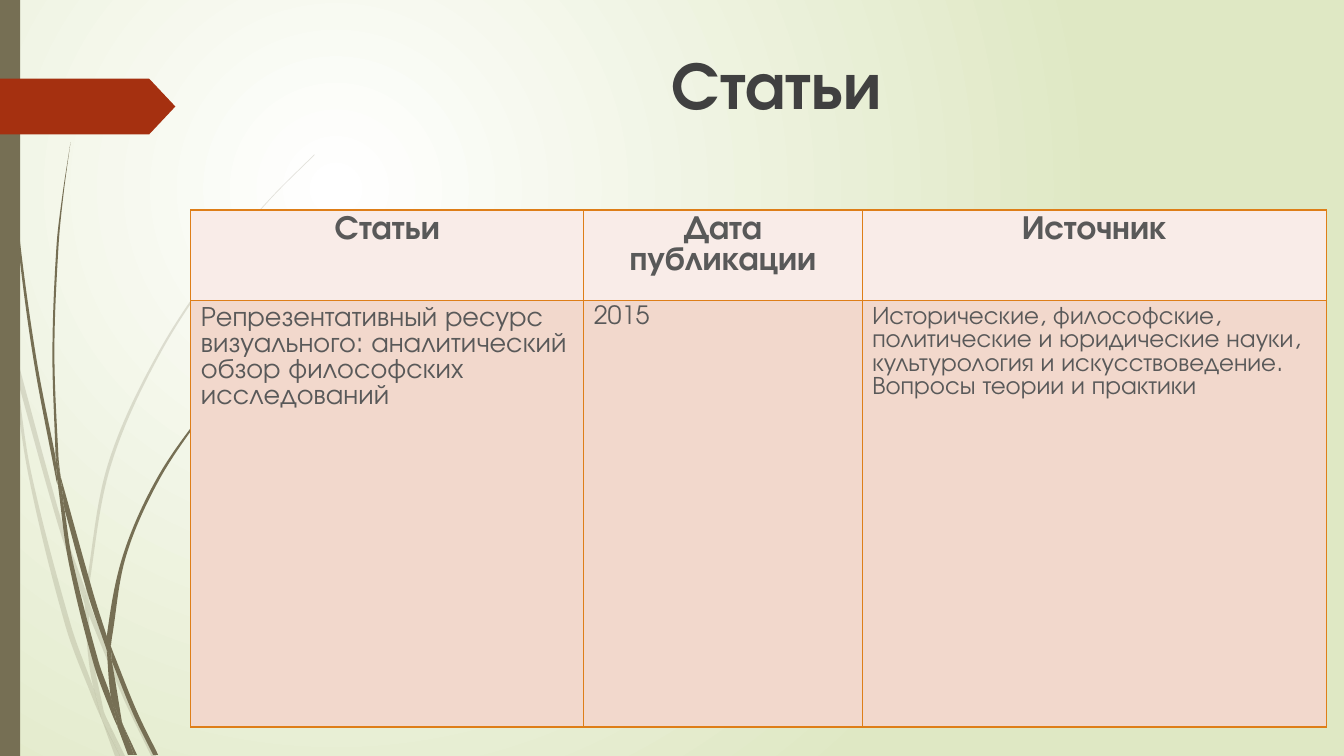
from math import dist

from lxml import etree
from pptx import Presentation
from pptx.dml.color import RGBColor
from pptx.enum.shapes import MSO_SHAPE as Preset
from pptx.enum.text import MSO_ANCHOR as Anchor, PP_ALIGN as Align
from pptx.oxml import parse_xml
from pptx.oxml.ns import nsdecls, qn
from pptx.util import Cm, Pt

FONT = "TeX Gyre Adventor"
COLOURS = {
    "centre": "FFFFFF", "edge": "DFE8C4", "grass": "766F54", "arrow": "A53010",
    "title": "404040", "text": "595959", "border": "DE7E18",
    "header": "F9ECE8", "body": "F2D8CC",
}
TITLE = "Статьи"
HEADERS = ["Статьи", "Дата публикации", "Источник"]
ARTICLE = [
    ("Репрезентативный ресурс визуального: аналитический обзор "
     "философских исследований", 20),
    ("2015", 18),
    ("Исторические, философские, политические и юридические науки, "
     "культурология и искусствоведение. Вопросы теории и практики", 18),
]
COLUMN_WIDTHS = [9.9, 7.02, 11.7]
ROW_HEIGHTS = [1.73, 10.74]

# Each piece of grass is two facing edges; points are in units of UNIT cm
UNIT = 2.54
PALE_GRASS = [
    ([(0.11, 3.5), (0.09, 3.22), (0, 2.82)], [(0, 2.99), (0.1, 3.44)]),
    ([(0.17, 3.76), (0.58, 5.22), (0.84, 5.99)],
     [(0.85, 5.86), (0.62, 5.2), (0.14, 3.45)]),
    ([(0.88, 6.1), (1.23, 6.94), (1.5, 7.5)],
     [(1.55, 7.5), (1.27, 6.92), (0.92, 6.07), (0.88, 5.96)]),
    ([(1.05, 7.11), (1.19, 7.5)], [(1.24, 7.5)]),
    ([(0.11, 3.5), (0.28, 4.7), (0.65, 6.21), (0.92, 6.93), (1.01, 7.14)],
     [(0.93, 6.83), (0.7, 6.19), (0.31, 4.69), (0.17, 3.76)]),
    ([(0.84, 5.99), (0.87, 6.46), (0.93, 6.83), (1.05, 7.11)],
     [(1.03, 7.06), (0.91, 6.46), (0.88, 6.1)]),
    ([(0.88, 5.96), (0.88, 5.84), (1.1, 4.62), (1.6, 3.49), (2.29, 2.45),
      (2.68, 1.98), (3.12, 1.54)],
     [(3.12, 1.53), (2.68, 1.97), (2.28, 2.44), (1.58, 3.48), (1.07, 4.61),
      (0.85, 5.84)]),
    ([(1.01, 7.14), (1.14, 7.5)], [(1.19, 7.5)]),
    ([(0.88, 6.1), (0.88, 5.96)], [(0.85, 5.86), (0.84, 5.99)]),
    ([(0.93, 6.83), (0.99, 7.07), (1.01, 7.14), (1.19, 7.5)],
     [(1.05, 7.11), (0.96, 6.92)]),
]
DARK_GRASS = [
    ([(0.03, 0), (0.04, 0.48), (0.07, 1.1), (0.17, 2.33), (0.33, 3.55),
      (0.56, 4.77), (0.57, 4.81)],
     [(0.55, 4.53), (0.36, 3.55), (0.19, 2.32), (0.08, 1.09), (0.05, 0.48),
      (0.04, 0)]),
    ([(0.64, 5.05), (0.88, 5.92), (1.06, 6.45)],
     [(1.06, 6.31), (0.93, 5.9), (0.6, 4.72)]),
    ([(1.11, 6.56), (1.32, 7.08), (1.52, 7.49)],
     [(1.57, 7.49), (1.36, 7.06), (1.13, 6.49), (1.1, 6.41)]),
    ([(0.57, 4.77), (0.68, 5.57), (0.93, 6.59), (1.11, 7.08), (1.17, 7.22)],
     [(1.16, 7.17), (1.1, 6.91), (0.98, 6.57), (0.72, 5.56), (0.64, 5.05)]),
    ([(0.6, 4.72), (0.58, 4.53), (0.54, 3.49), (0.58, 2.45), (0.63, 1.93),
      (0.7, 1.41)],
     [(0.7, 1.41), (0.62, 1.93), (0.56, 2.45), (0.52, 3.49), (0.55, 4.49)]),
    ([(1.22, 7.19), (1.33, 7.49)], [(1.36, 7.49)]),
    ([(0.55, 4.49), (0.57, 4.77), (0.64, 5.05)], [(0.6, 4.72)]),
    ([(1.11, 6.33), (1.25, 5.52), (1.58, 4.76), (2.05, 4.06), (2.31, 3.74),
      (2.45, 3.59), (2.61, 3.44)],
     [(2.6, 3.44), (2.45, 3.58), (2.31, 3.73), (2.04, 4.05), (1.56, 4.74),
      (1.22, 5.51), (1.06, 6.31), (1.1, 6.41)]),
    ([(1.17, 7.22), (1.27, 7.49)], [(1.31, 7.49)]),
    ([(1.06, 6.45), (1.1, 6.91), (1.16, 7.06), (1.22, 7.19)],
     [(1.21, 7.16), (1.11, 6.56), (1.09, 6.51)]),
    ([(1.06, 6.31), (1.06, 6.45)], [(1.11, 6.56), (1.1, 6.41)]),
    ([(1.1, 6.91), (1.16, 7.17), (1.17, 7.22), (1.3, 7.49)],
     [(1.33, 7.49), (1.22, 7.19), (1.16, 7.06)]),
]


def colour(name):
    return RGBColor.from_string(COLOURS[name])


def paint(shape, name, opacity=100):
    shape.shadow.inherit = False
    shape.line.fill.background()
    shape.fill.solid()
    shape.fill.fore_color.rgb = colour(name)
    if opacity < 100:
        tone = shape.fill._xPr.find(f".//{qn('a:srgbClr')}")
        etree.SubElement(tone, qn("a:alpha"), val=str(opacity * 1000))


def curve_controls(edge):
    """Return both control points of every smooth segment along an edge."""
    padded = [edge[0], *edge, edge[-1]]
    controls = []
    for before, start, end, after in zip(padded, padded[1:], padded[2:], padded[3:]):
        reach = dist(start, end) / 3
        leave, arrive = reach / dist(before, end), reach / dist(start, after)
        controls.append((
            [s + (e - b) * leave for s, e, b in zip(start, end, before)],
            [e - (a - s) * arrive for s, e, a in zip(start, end, after)]))
    return controls


def add_grass(slide, edges, opacity):
    first, second = [[(Cm(x * UNIT), Cm(y * UNIT)) for x, y in edge] for edge in edges]
    outline = first + second
    builder = slide.shapes.build_freeform(*outline[0])
    builder.add_line_segments(outline[1:], close=True)
    shape = builder.convert_to_shape()
    lines = list(shape._element.iter(qn("a:lnTo")))
    # None stands for the straight step from one edge to the other
    controls = curve_controls(first) + [None] + curve_controls(second)
    for line, pair in zip(lines, controls):
        if pair:
            line.tag = qn("a:cubicBezTo")
            for position, (x, y) in enumerate(pair):
                line.insert(position, line.makeelement(
                    qn("a:pt"), x=str(round(x - shape.left)), y=str(round(y - shape.top))))
    paint(shape, "grass", opacity)


def set_background(slide):
    slide.background.fill.solid()
    properties = slide._element.cSld.bg.bgPr
    stops = "".join(
        f'<a:gs pos="{position}"><a:srgbClr val="{COLOURS[name]}"/></a:gs>'
        for position, name in [(0, "centre"), (100000, "edge")])
    gradient = parse_xml(
        f'<a:gradFill {nsdecls("a")} rotWithShape="1"><a:gsLst>{stops}</a:gsLst>'
        '<a:path path="circle"><a:fillToRect l="50000" t="50000" r="100000" '
        'b="100000"/></a:path></a:gradFill>')
    properties.replace(properties.find(qn("a:solidFill")), gradient)


def write(frame, text, size, name, bold=False, align=Align.LEFT):
    para = frame.paragraphs[0]
    para.text, para.alignment = text, align
    para.font.name, para.font.size, para.font.bold = FONT, Pt(size), bold
    para.font.color.rgb = colour(name)


def set_borders(cell):
    properties = cell._tc.get_or_add_tcPr()
    for position, side in enumerate(["lnL", "lnR", "lnT", "lnB"]):
        properties.insert(position, parse_xml(
            f'<a:{side} {nsdecls("a")} w="{Pt(1)}"><a:solidFill>'
            f'<a:srgbClr val="{COLOURS["border"]}"/></a:solidFill></a:{side}>'))


def add_articles_table(slide):
    rows = [[(header, 24) for header in HEADERS], ARTICLE]
    table = slide.shapes.add_table(
        len(rows), len(HEADERS), Cm(4.81), Cm(5.29),
        Cm(sum(COLUMN_WIDTHS)), Cm(sum(ROW_HEIGHTS))).table
    for column, width in zip(table.columns, COLUMN_WIDTHS):
        column.width = Cm(width)
    for row, height in zip(table.rows, ROW_HEIGHTS):
        row.height = Cm(height)
    looks = [("header", True, Align.CENTER), ("body", False, Align.LEFT)]
    for row_index, (row, (fill, bold, align)) in enumerate(zip(rows, looks)):
        for column_index, (text, size) in enumerate(row):
            cell = table.cell(row_index, column_index)
            cell.fill.solid()
            cell.fill.fore_color.rgb = colour(fill)
            set_borders(cell)
            write(cell.text_frame, text, size, "text", bold, align)


def main():
    deck = Presentation()
    deck.slide_width, deck.slide_height = Cm(33.87), Cm(19.05)
    slide = deck.slides.add_slide(deck.slide_layouts[6])
    set_background(slide)
    for pieces, opacity in [(PALE_GRASS, 20), (DARK_GRASS, 100)]:
        for edges in pieces:
            add_grass(slide, edges, opacity)
    stripe = slide.shapes.add_shape(Preset.RECTANGLE, 0, 0, Cm(0.51), deck.slide_height)
    paint(stripe, "grass")
    arrow = slide.shapes.add_shape(Preset.PENTAGON, 0, Cm(1.98), Cm(4.42), Cm(1.41))
    arrow.adjustments[0] = 0.47
    paint(arrow, "arrow")
    title = slide.shapes.add_textbox(Cm(7.2), Cm(0.94), Cm(24.75), Cm(4.34))
    title.text_frame.word_wrap = True
    title.text_frame.vertical_anchor = Anchor.TOP
    write(title.text_frame, TITLE, 48, "title", True, Align.CENTER)
    add_articles_table(slide)
    deck.save("out.pptx")


if __name__ == "__main__":
    main()
